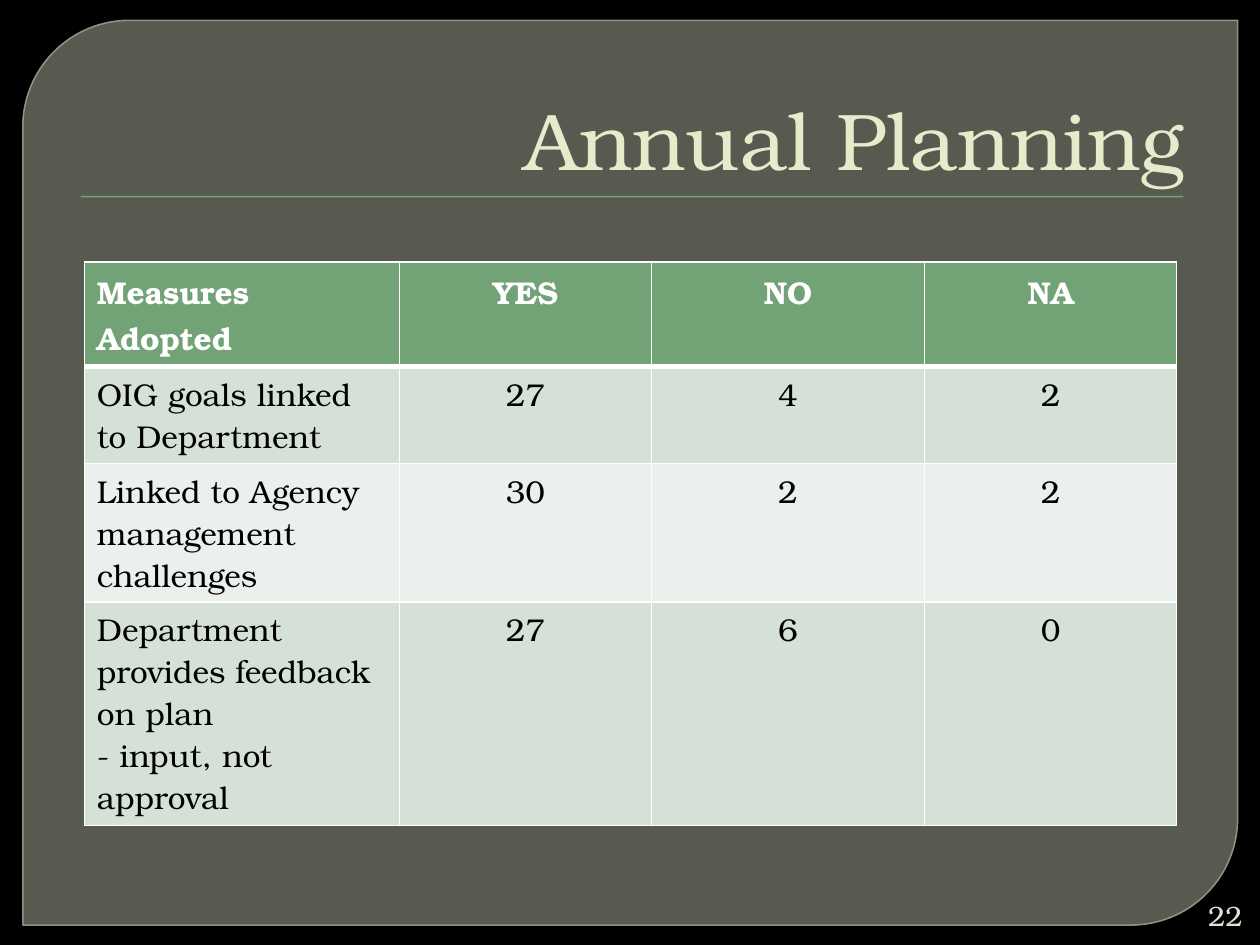
from dataclasses import dataclass

from lxml import etree
from pptx import Presentation
from pptx.dml.color import RGBColor
from pptx.enum.shapes import MSO_SHAPE
from pptx.enum.text import MSO_ANCHOR, MSO_AUTO_SIZE, PP_ALIGN
from pptx.oxml.ns import qn
from pptx.util import Cm, Pt

LEFT, MID, RIGHT = PP_ALIGN.LEFT, PP_ALIGN.CENTER, PP_ALIGN.RIGHT
BASE, CENTER = MSO_ANCHOR.BOTTOM, MSO_ANCHOR.MIDDLE
PANEL, RECT = MSO_SHAPE.ROUND_2_DIAG_RECTANGLE, MSO_SHAPE.RECTANGLE
FONT = "TeX Gyre Bonum"
HEX = {
    "back": "000000", "panel": "888B7B", "edge": "9DA090",
    "green": "72A376", "title": "E7EACB", "page": "E0E0D4",
    "white": "FFFFFF", "ink": "000000", "odd": "D5E0D6", "even": "EBF0EC",
}


@dataclass
class Box:
    left: float
    top: float
    width: float
    height: float

    def cm(self) -> tuple:
        return Cm(self.left), Cm(self.top), Cm(self.width), Cm(self.height)


@dataclass
class Row:
    height: float
    fill: str
    cells: tuple


TITLE = Box(1.27, 0.71, 22.86, 3.18)
CARD = Box(0.46, 0.41, 24.49, 18.24)
RULE = Box(1.63, 3.95, 22.22, 0.03)
GRID = Box(1.7, 5.28, 22.02, 11.36)
PAGE = Box(24, 18.08, 1.3, 0.76)
WIDTHS = (6.35, 5.08, 5.51, 5.08)
ROWS = (
    Row(2.11, "green", ("Measures Adopted", "YES", "NO", "NA")),
    Row(1.95, "odd", ("OIG goals linked to Department", "27", "4", "2")),
    Row(2.79, "even", ("Linked to Agency management challenges", "30", "2", "2")),
    Row(4.5, "odd", ("Department provides feedback on plan\n- input, not approval",
                     "27", "6", "0")),
)


def color(name: str) -> RGBColor:
    return RGBColor.from_string(HEX[name])


def style(frame, size: float, tone: str, align, bold: bool = False) -> None:
    for para in frame.paragraphs:
        para.alignment = align
        for run in para.runs:
            font = run.font
            font.name, font.size, font.bold = FONT, Pt(size), bold
            font.color.rgb = color(tone)


def fade(fill, share: int) -> None:
    tone = fill.find(qn("a:solidFill"))[0]
    etree.SubElement(tone, qn("a:alpha"), val=str(share * 1000))


def block(slide, kind, box: Box, fill: str):
    shape = slide.shapes.add_shape(kind, *box.cm())
    shape.shadow.inherit = False
    shape.fill.solid()
    shape.fill.fore_color.rgb = color(fill)
    shape.line.fill.background()
    return shape


def border(cell, side: str, width: float) -> None:
    props = cell._tc.get_or_add_tcPr()
    line = etree.SubElement(props, qn(f"a:ln{side}"), w=str(Pt(width)))
    fill = etree.SubElement(line, qn("a:solidFill"))
    etree.SubElement(fill, qn("a:srgbClr"), val=HEX["white"])


def draw_card(slide) -> None:
    card = block(slide, PANEL, CARD, "panel")
    card.adjustments[0], card.adjustments[1] = 0.118, 0
    card.line.color.rgb = color("edge")
    card.line.width = Pt(0.87)
    props = card._element.spPr
    fade(props, 65)
    fade(props.find(qn("a:ln")), 88)


def draw_title(slide) -> None:
    title = slide.shapes.title
    title.left, title.top, title.width, title.height = TITLE.cm()
    frame = title.text_frame
    frame.text = "Annual Planning"
    frame.vertical_anchor = BASE
    frame.auto_size = MSO_AUTO_SIZE.NONE
    style(frame, 46, "title", RIGHT)
    slide.shapes._spTree.append(title._element)


def draw_grid(slide) -> None:
    table = slide.shapes.add_table(len(ROWS), len(WIDTHS), *GRID.cm()).table
    for col, width in zip(table.columns, WIDTHS):
        col.width = Cm(width)
    for r, row in enumerate(ROWS):
        table.rows[r].height = Cm(row.height)
        head = r == 0
        for c, text in enumerate(row.cells):
            cell = table.cell(r, c)
            cell.text = text
            style(cell.text_frame, 18, "white" if head else "ink",
                  MID if c else LEFT, head)
            for side in "LRTB":
                thick = (head and side == "B") or (r == 1 and side == "T")
                border(cell, side, 3 if thick else 1)
            cell.fill.solid()
            cell.fill.fore_color.rgb = color(row.fill)


def draw_page(slide) -> None:
    frame = slide.shapes.add_textbox(*PAGE.cm()).text_frame
    frame.word_wrap = True
    frame.vertical_anchor = CENTER
    frame.text = "22"
    style(frame, 16, "page", RIGHT)


def main() -> None:
    deck = Presentation()
    deck.slide_width, deck.slide_height = Cm(25.4), Cm(19.05)
    slide = deck.slides.add_slide(deck.slide_layouts[5])
    slide.background.fill.solid()
    slide.background.fill.fore_color.rgb = color("back")
    draw_card(slide)
    block(slide, RECT, RULE, "green")
    draw_title(slide)
    draw_grid(slide)
    draw_page(slide)
    deck.save("out.pptx")


if __name__ == "__main__":
    main()
